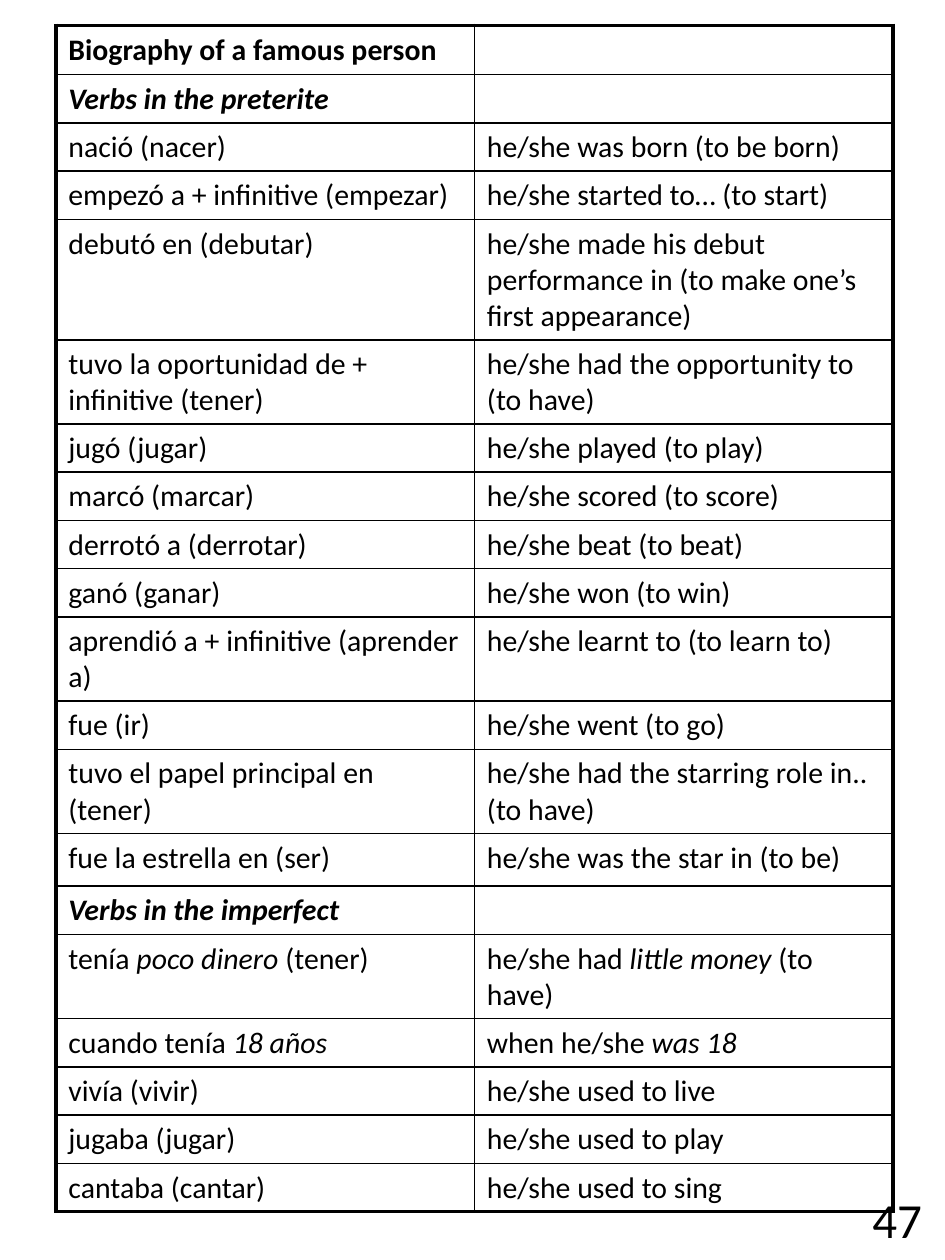
from lxml.etree import SubElement
from pptx import Presentation
from pptx.dml.color import RGBColor
from pptx.enum.text import PP_ALIGN as Align
from pptx.oxml.ns import qn
from pptx.util import Inches, Pt

FONT = "Calibri"
INK = "000000"
THIN, THICK = 1, 2.25
# The table grid is measured in points
COLUMN = 239.2
LEFT, TOP = 31.9, 14.5

# Spanish, English, lines of text in the row; asterisks enclose italics
ENTRIES = [
    ("Biography of a famous person", "", 1),
    ("*Verbs in the preterite*", "", 1),
    ("nació (nacer)", "he/she was born (to be born)", 1),
    ("empezó a + infinitive (empezar)", "he/she started to… (to start)", 1),
    ("debutó en (debutar)",
     "he/she made his debut performance in (to make one’s first appearance)", 3),
    ("tuvo la oportunidad de + infinitive (tener)",
     "he/she had the opportunity to (to have)", 2),
    ("jugó (jugar)", "he/she played (to play)", 1),
    ("marcó (marcar)", "he/she scored (to score)", 1),
    ("derrotó a (derrotar)", "he/she beat (to beat)", 1),
    ("ganó (ganar)", "he/she won (to win)", 1),
    ("aprendió a + infinitive (aprender a)", "he/she learnt to (to learn to)", 2),
    ("fue (ir)", "he/she went (to go)", 1),
    ("tuvo el papel principal en (tener)",
     "he/she had the starring role in..(to have)", 2),
    ("fue la estrella en (ser)", "he/she was the star in (to be)", 1),
    ("*Verbs in the imperfect*", "", 1),
    ("tenía *poco dinero* (tener)", "he/she had *little money* (to have)", 2),
    ("cuando tenía *18 años*", "when he/she *was 18*", 1),
    ("vivía (vivir)", "he/she used to live", 1),
    ("jugaba (jugar)", "he/she used to play", 1),
    ("cantaba (cantar)", "he/she used to sing", 1),
]
FIRST_LINE, NEXT_LINE = 27.6, 20.4
LAST_PRETERITE = 13  # slightly taller, to close its section


def write(frame, text, size, bold=False, align=Align.LEFT):
    """Write text into the frame's first paragraph, italic between asterisks."""
    para = frame.paragraphs[0]
    para.alignment = align
    for index, part in enumerate(text.split("*")):
        if part:
            span = para.add_run()
            span.text = part
            span.font.name = FONT
            span.font.size = Pt(size)
            span.font.bold = bold
            span.font.italic = index % 2 == 1
            span.font.color.rgb = RGBColor.from_string(INK)


def draw_borders(cell, **widths):
    """Draw cell borders; keywords L, R, T and B give widths in points."""
    properties = cell._tc.get_or_add_tcPr()
    for side, width in widths.items():
        line = SubElement(properties, qn(f"a:ln{side}"), w=str(Pt(width)))
        fill = SubElement(line, qn("a:solidFill"))
        SubElement(fill, qn("a:srgbClr"), val=INK)


deck = Presentation()
deck.slide_width, deck.slide_height = Inches(7.5), Inches(10)
page = deck.slides.add_slide(deck.slide_layouts[6])

heights = [FIRST_LINE + (lines - 1) * NEXT_LINE for *_, lines in ENTRIES]
heights[0] = 28.1
heights[LAST_PRETERITE] = 30.2
table = page.shapes.add_table(
    len(ENTRIES), 2, Pt(LEFT), Pt(TOP),
    Pt(2 * COLUMN), Pt(sum(heights))).table
table.first_row = table.horz_banding = False
for column in table.columns:
    column.width = Pt(COLUMN)

last = len(ENTRIES) - 1
for row, (spanish, english, _) in enumerate(ENTRIES):
    table.rows[row].height = Pt(heights[row])
    for col, text in enumerate((spanish, english)):
        cell = table.cell(row, col)
        draw_borders(cell,
                     L=THICK if col == 0 else THIN,
                     R=THICK if col == 1 else THIN,
                     T=THICK if row == 0 else THIN,
                     B=THICK if row == last else THIN)
        cell.fill.background()
        # Small enough margins keep every row at its set height
        cell.margin_top = Inches(0.05 if text else 0)
        cell.margin_bottom = Inches(0.04 if text else 0)
        write(cell.text_frame, text, 17, bold=not english)

number_box = page.shapes.add_textbox(
    Inches(6.74), Inches(9.39), Inches(0.76), Inches(0.57))
number_box.text_frame.word_wrap = True
write(number_box.text_frame, "47", 28, align=Align.CENTER)

deck.save("out.pptx")
